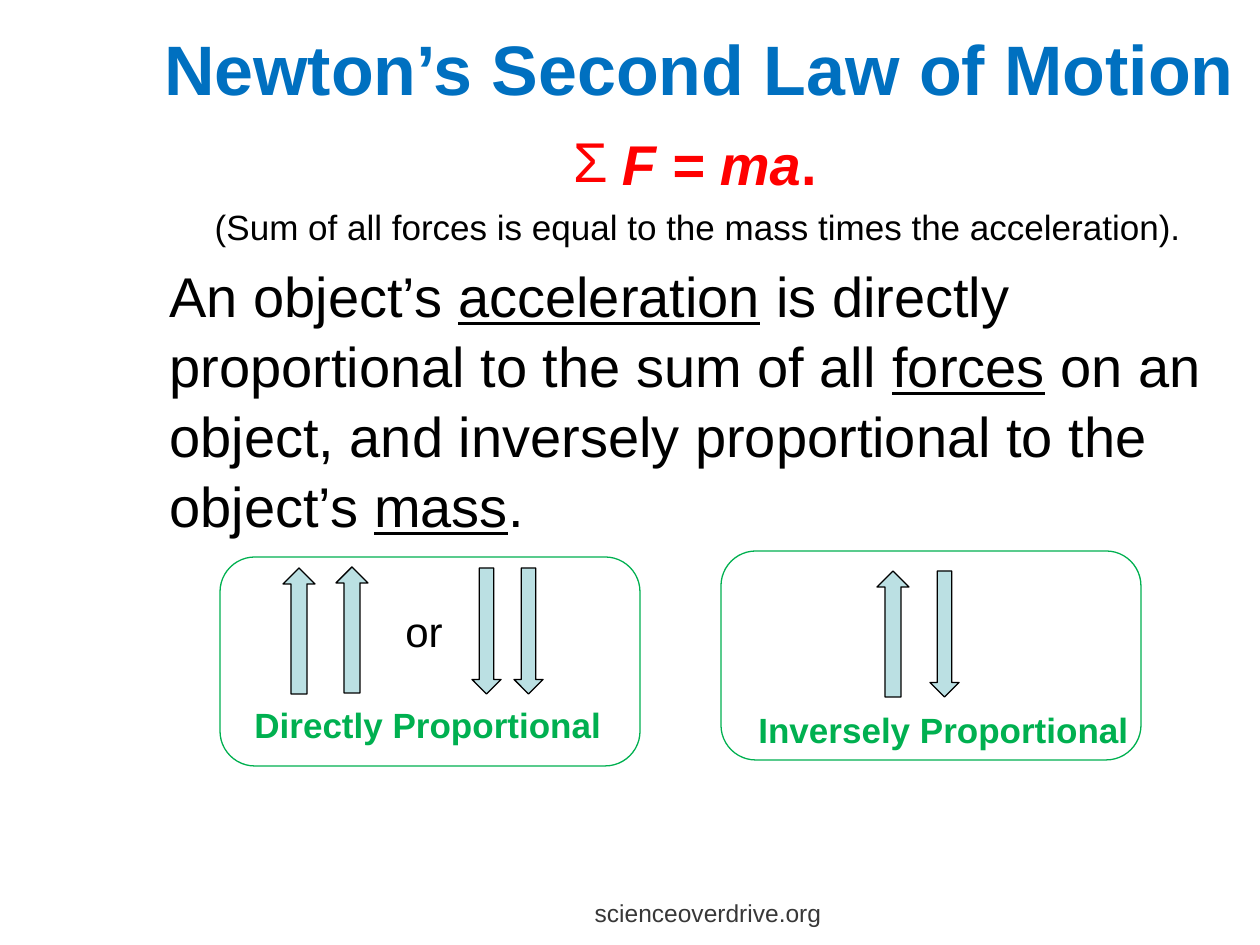
from lxml import etree
from pptx import Presentation
from pptx.dml.color import RGBColor
from pptx.enum.shapes import MSO_SHAPE
from pptx.enum.text import MSO_ANCHOR, PP_ALIGN
from pptx.oxml.ns import qn
from pptx.util import Pt

PX = 914400 / 126
UP, DOWN, ROUNDED = MSO_SHAPE.UP_ARROW, MSO_SHAPE.DOWN_ARROW, MSO_SHAPE.ROUNDED_RECTANGLE
LEFT, CENTER = PP_ALIGN.LEFT, PP_ALIGN.CENTER
TOP, MIDDLE = MSO_ANCHOR.TOP, MSO_ANCHOR.MIDDLE

BLUE = RGBColor(0x00, 0x70, 0xC0)
RED = RGBColor(0xFF, 0x00, 0x00)
BLACK = RGBColor(0x00, 0x00, 0x00)
GRAY = RGBColor(0x38, 0x38, 0x38)
GREEN = RGBColor(0x00, 0xB0, 0x50)
PALE_TEAL = RGBColor(0xBB, 0xE0, 0xE3)

TITLE = {"size": 40, "bold": True, "color": BLUE}
FORMULA = {"size": 32, "bold": True, "color": RED}
NOTE = {"size": 20, "color": BLACK}
LAW = {"size": 32, "color": BLACK}
KEYWORD = {**LAW, "underline": True}
LABEL = {"size": 20, "bold": True, "color": GREEN}
OR = {"size": 24, "color": BLACK}
FOOTER = {"size": 14, "color": GRAY}

BULLET_INDENT = 48
LAW_LINES = [
    {"align": CENTER, "bullet": "Σ",
     "runs": [("F = ma", {**FORMULA, "italic": True}), (". ", FORMULA)]},
    {"align": CENTER, "before": 4, "runs": [
        ("(Sum of all forces is equal to the mass times the acceleration). ", NOTE)]},
    {"before": 6.4, "runs": [
        ("An object’s ", LAW), ("acceleration", KEYWORD),
        (" is directly proportional to the sum of all ", LAW), ("forces", KEYWORD),
        (" on an object, and inversely proportional to the object’s ", LAW),
        ("mass", KEYWORD), (".", LAW)]},
]

ARROW_HEIGHT = 126
ARROW_WIDTHS = {UP: 32, DOWN: 29}
FRAME_SIZE = (420, 209)
PANELS = [
    {"frame": (721, 551), "arrows": [(UP, 877, 571), (DOWN, 930, 571)],
     "labels": [("Inversely Proportional", (746, 702, 398, 55), LABEL, False)]},
    {"frame": (220, 557),
     "arrows": [(UP, 283, 568), (UP, 336, 567), (DOWN, 514, 568), (DOWN, 472, 568)],
     "labels": [("Directly Proportional", (242, 697, 399, 55), LABEL, True),
                ("or", (393, 599, 95, 63), OR, True)]},
]


def emu(*lengths):
    return [round(length * PX) for length in lengths]


def add_text(shapes, box, lines, anchor=TOP, wrap=True, spacing=None):
    frame = shapes.add_textbox(*emu(*box)).text_frame
    frame.word_wrap = wrap
    frame.vertical_anchor = anchor
    for index, line in enumerate(lines):
        paragraph = frame.add_paragraph() if index else frame.paragraphs[0]
        paragraph.alignment = line.get("align", LEFT)
        paragraph.space_before = Pt(line.get("before", 0))
        if spacing:
            paragraph.line_spacing = spacing
        if "bullet" in line:
            properties = paragraph._p.get_or_add_pPr()
            indent, = emu(BULLET_INDENT)
            properties.set("marL", str(indent))
            properties.set("indent", str(-indent))
            etree.SubElement(properties, qn("a:buFont"), typeface="Arial")
            etree.SubElement(properties, qn("a:buChar"), char=line["bullet"])
        for words, style in line["runs"]:
            run = paragraph.add_run()
            run.text = words
            run.font.name = "Arial"
            for name, value in style.items():
                if name == "color":
                    run.font.color.rgb = value
                else:
                    setattr(run.font, name, Pt(value) if name == "size" else value)


def add_outline(shapes, kind, box, line, fill=None):
    shape = shapes.add_shape(kind, *emu(*box))
    shape.shadow.inherit = False
    shape.line.color.rgb = line
    shape.line.width = Pt(0.75)
    if fill is None:
        shape.fill.background()
    else:
        shape.fill.solid()
        shape.fill.fore_color.rgb = fill


def add_panel(slide, panel):
    shapes = slide.shapes.add_group_shape().shapes
    for kind, left, top in panel["arrows"]:
        add_outline(shapes, kind, (left, top, ARROW_WIDTHS[kind], ARROW_HEIGHT),
                    BLACK, PALE_TEAL)
    add_outline(shapes, ROUNDED, panel["frame"] + FRAME_SIZE, GREEN)
    for words, box, style, wrap in panel["labels"]:
        add_text(shapes, box, [{"runs": [(words, style)]}], wrap=wrap)


def main():
    deck = Presentation()
    deck.slide_width, deck.slide_height = emu(1260, 945)
    slide = deck.slides.add_slide(deck.slide_layouts[6])
    add_text(slide.shapes, (136, 0, 1126, 136),
             [{"align": CENTER, "runs": [("Newton’s Second Law of Motion", TITLE)]}], MIDDLE)
    add_text(slide.shapes, (157, 121, 1092, 678), LAW_LINES, spacing=1.04)
    add_text(slide.shapes, (156, 892, 1104, 40),
             [{"align": CENTER, "runs": [("scienceoverdrive.org", FOOTER)]}])
    for panel in PANELS:
        add_panel(slide, panel)
    deck.save("out.pptx")


if __name__ == "__main__":
    main()
